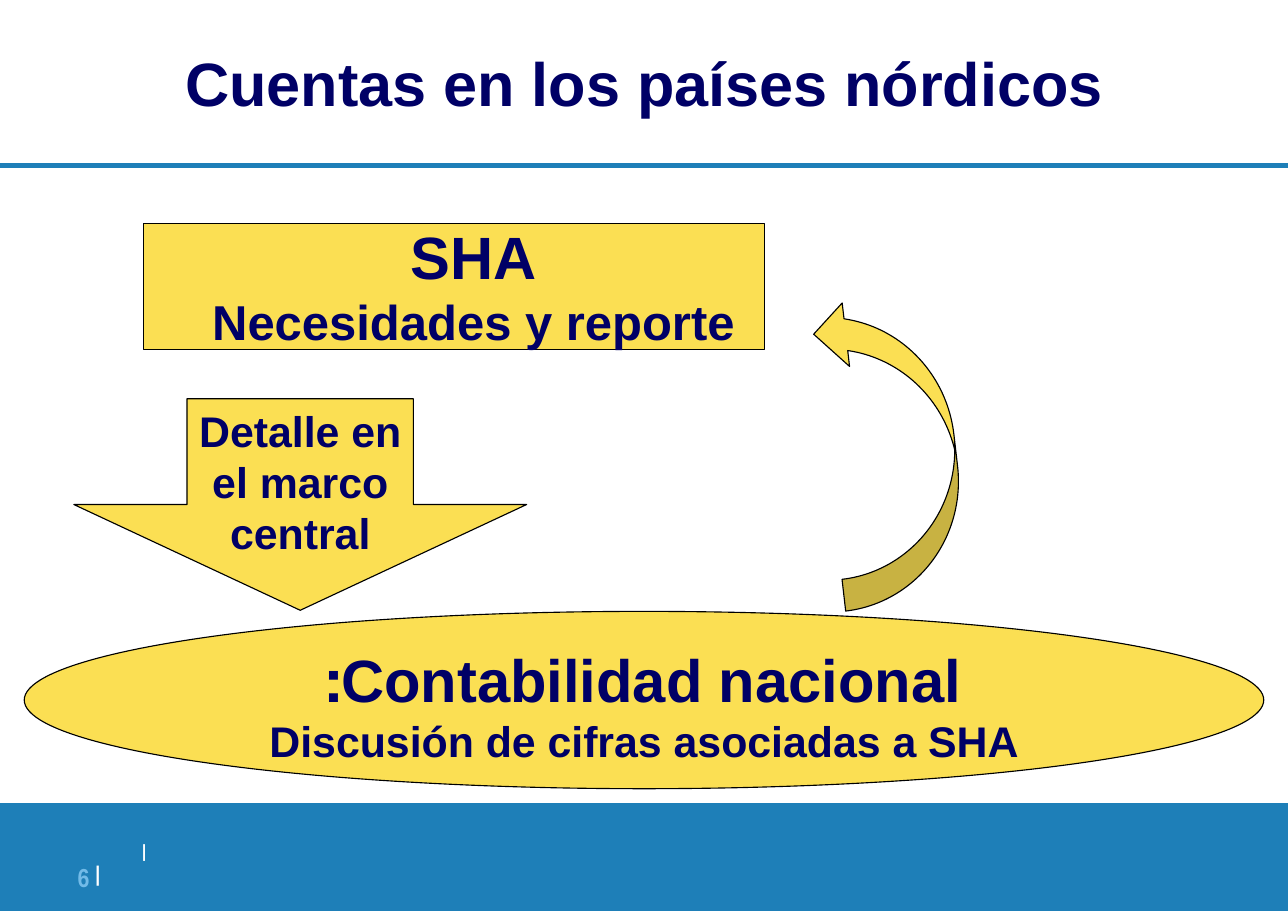
from dataclasses import dataclass

from lxml import etree
from pptx import Presentation
from pptx.dml.color import RGBColor
from pptx.enum.shapes import MSO_CONNECTOR, MSO_SHAPE
from pptx.enum.text import MSO_ANCHOR, PP_ALIGN
from pptx.oxml.ns import qn
from pptx.util import Pt

PX = 9144  # EMU per px, 100 px to the inch
W, H = 1169, 827
RECT, ELLIPSE = MSO_SHAPE.RECTANGLE, MSO_SHAPE.OVAL
DOWN, CURVED = MSO_SHAPE.DOWN_ARROW, MSO_SHAPE.CURVED_UP_ARROW
LEFT, CENTER, RIGHT = PP_ALIGN.LEFT, PP_ALIGN.CENTER, PP_ALIGN.RIGHT
TOP, MIDDLE = MSO_ANCHOR.TOP, MSO_ANCHOR.MIDDLE
COLORS = {"blue": "1E7FB8", "sky": "72BBE8", "pale": "96CCEE", "navy": "000066",
          "yellow": "FBDF53", "black": "000000", "white": "FFFFFF"}


@dataclass(frozen=True)
class Run:
    text: str
    size: int
    color: str = "navy"
    font: str = "Arial"
    raised: int = 0  # percent above the baseline


@dataclass(frozen=True)
class Figure:
    kind: MSO_SHAPE
    box: tuple[int, int, int, int]
    lines: tuple[Run, ...] = ()
    rotation: float = 0


def rgb(name: str) -> RGBColor:
    return RGBColor.from_string(COLORS[name])


def emu(*lengths: int) -> list[int]:
    return [length * PX for length in lengths]


def format_run(r, run: Run) -> None:
    r.font.name, r.font.size, r.font.bold = run.font, Pt(run.size), True
    r.font.color.rgb = rgb(run.color)
    if run.raised:
        r.font._element.set("baseline", str(run.raised * 1000))


def write_lines(tf, lines: tuple[Run, ...]) -> None:
    """Write centred right-to-left paragraphs, one per run."""
    tf.word_wrap, tf.vertical_anchor = True, TOP
    tf.text = "\n".join(line.text for line in lines)
    for p, line in zip(tf.paragraphs, lines):
        p.alignment = CENTER
        p._p.get_or_add_pPr().set("rtl", "1")
        format_run(p.runs[0], line)


def add_label(s, box: tuple[int, int, int, int], runs: tuple[Run, ...],
              align: PP_ALIGN, anchor: MSO_ANCHOR = TOP):
    """Add one paragraph without insets and return its text frame."""
    tf = s.shapes.add_textbox(*emu(*box)).text_frame
    tf.word_wrap, tf.vertical_anchor = True, anchor
    tf.margin_left = tf.margin_top = tf.margin_right = tf.margin_bottom = 0
    p = tf.paragraphs[0]
    p.alignment = align
    for run in runs:
        r = p.add_run()
        r.text = run.text
        format_run(r, run)
    return tf


def add_text_shadow(r) -> None:
    effects = etree.Element(qn("a:effectLst"))
    shadow = etree.SubElement(effects, qn("a:outerShdw"), dist="25400", dir="2700000")
    etree.SubElement(shadow, qn("a:srgbClr"), val=COLORS["pale"])
    r.font._element.find(qn("a:solidFill")).addnext(effects)


def add_figure(s, figure: Figure) -> None:
    sp = s.shapes.add_shape(figure.kind, *emu(*figure.box))
    sp.shadow.inherit = False
    sp.fill.solid()
    sp.fill.fore_color.rgb = rgb("yellow")
    sp.line.color.rgb, sp.line.width = rgb("black"), Pt(0.75)
    sp.rotation = figure.rotation
    if figure.lines:
        write_lines(sp.text_frame, figure.lines)


def add_frame(s) -> None:
    """Add the rule under the title and the footer band."""
    rule = s.shapes.add_connector(MSO_CONNECTOR.STRAIGHT, *emu(0, 150, W, 150))
    rule.line.color.rgb, rule.line.width = rgb("blue"), Pt(3)
    etree.SubElement(rule._element.spPr, qn("a:effectLst"))
    band = s.shapes.add_shape(RECT, *emu(0, 729, W, H - 729))
    band.shadow.inherit = False
    band.fill.solid()
    band.fill.fore_color.rgb = rgb("blue")
    band.line.fill.background()
    add_label(s, (129, 754, 533, 52), (Run("|", 20, "white", "Arial Narrow", 12),), LEFT)
    add_label(s, (46, 772, 45, 40), (Run("6 ", 17, "sky", "Arial Narrow"),
                                     Run("|", 24, "white", "Arial Narrow", 14)), RIGHT)


FIGURES = (
    Figure(RECT, (130, 203, 564, 114)),
    Figure(DOWN, (67, 362, 411, 192), (Run("Detalle en el marco central", 28),)),
    Figure(ELLIPSE, (22, 555, 1125, 161),
           (Run("Contabilidad nacional:", 39),
            Run("Discusión de cifras asociadas a SHA", 28))),
    Figure(CURVED, (668, 350, 282, 116), rotation=263.4),
)


def main() -> None:
    prs = Presentation()
    prs.slide_width, prs.slide_height = emu(W, H)
    s = prs.slides.add_slide(prs.slide_layouts[6])
    add_frame(s)
    title = add_label(s, (0, 0, W, 149), (Run("Cuentas en los países nórdicos", 40),),
                      CENTER, MIDDLE)
    add_text_shadow(title.paragraphs[0].runs[0])
    for figure in FIGURES:
        add_figure(s, figure)
    sha = s.shapes.add_textbox(*emu(145, 195, 570, 130))
    write_lines(sha.text_frame, (Run("SHA", 39), Run("Necesidades y reporte", 32)))
    prs.save("out.pptx")


if __name__ == "__main__":
    main()
